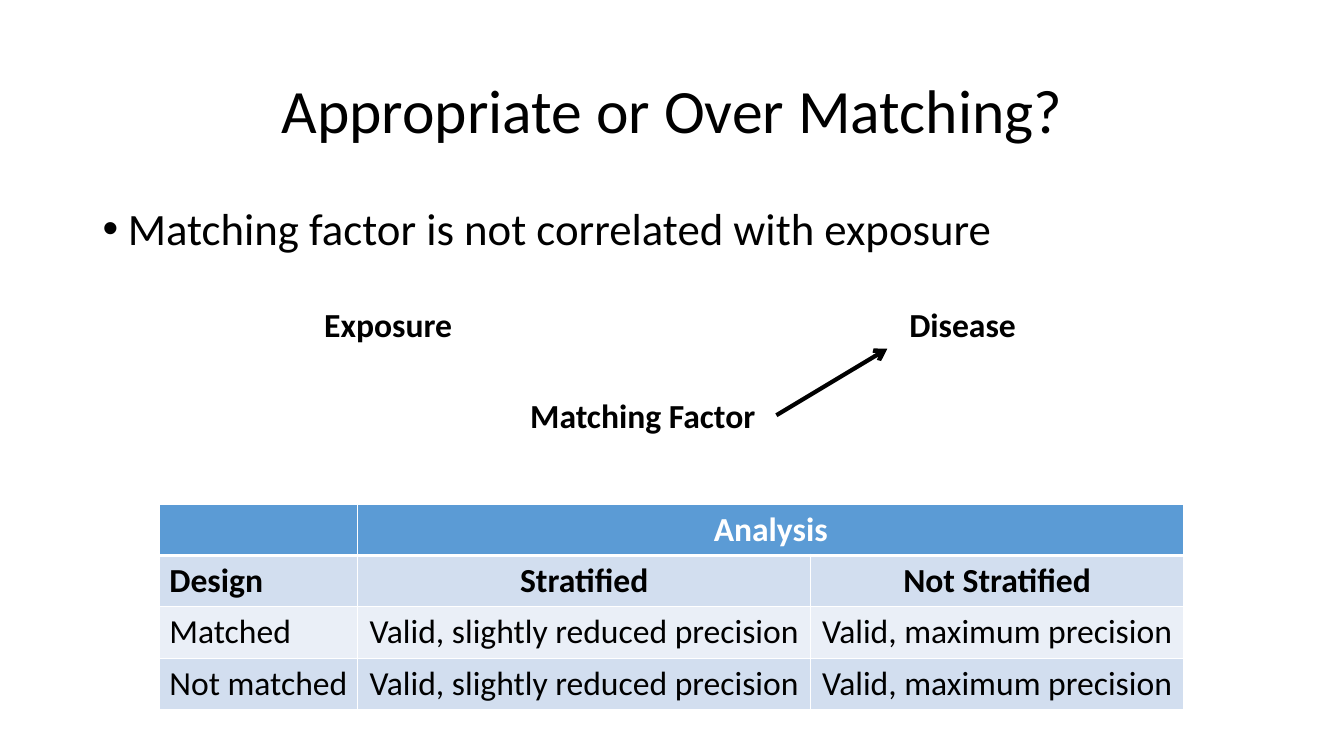
"""Build the slide on appropriate or over matching."""
from typing import NamedTuple

from lxml import etree
from pptx import Presentation
from pptx import util as u
from pptx.dml.color import RGBColor
from pptx.enum import shapes, text
from pptx.oxml import ns

PX = 9144
FONT = "Calibri"
BLACK, WHITE = "000000", "FFFFFF"
HEADER, BAND, LIGHT = "5B9BD5", "D2DEEF", "EAEFF7"
LEFT, CENTER = text.PP_ALIGN.LEFT, text.PP_ALIGN.CENTER
TOP, MIDDLE = text.MSO_ANCHOR.TOP, text.MSO_ANCHOR.MIDDLE


class Label(NamedTuple):
    words: str
    left: int
    top: int
    width: int
    height: int
    size: int = 24
    bold: bool = True
    align: text.PP_ALIGN = CENTER
    anchor: text.MSO_ANCHOR = TOP
    wrap: bool = False


class Row(NamedTuple):
    words: tuple[str, str, str]
    fill: str
    color: str = BLACK
    bold: bool = False


TITLE = Label("Appropriate or Over Matching?", 92, 40, 1150, 145, 44, False,
              anchor=MIDDLE, wrap=True)
STATEMENT = Label("Matching factor is not correlated with exposure",
                  92, 200, 1150, 476, 32, False, LEFT, wrap=True)
EXPOSURE = Label("Exposure", 293, 297, 184, 50)
DISEASE = Label("Disease", 892, 297, 127, 50, align=LEFT)
FACTOR = Label("Matching Factor", 505, 387, 265, 50)
ARROW_TIP = (880, 346)

TABLE_LEFT, TABLE_TOP, ROW_HEIGHT = 158, 500, 51
COLUMNS = (197, 449, 370)
VALID = ("Valid, slightly reduced precision", "Valid, maximum precision")
ROWS = (
    Row(("", "Analysis", ""), HEADER, WHITE, True),
    Row(("Design", "Stratified", "Not Stratified"), BAND, bold=True),
    Row(("Matched", *VALID), LIGHT),
    Row(("Not matched", *VALID), BAND),
)


def px(length: int) -> u.Emu:
    """Turn px into EMU."""
    return u.Emu(length * PX)


def rgb(color: str) -> RGBColor:
    """Turn a hex string into a colour."""
    return RGBColor.from_string(color)


def write(frame, words: str, size: int, color: str, bold: bool, align):
    """Fill a text frame with one formatted paragraph and return it."""
    frame.text = words
    line = frame.paragraphs[0]
    line.alignment = align
    for run in line.runs:
        run.font.name, run.font.size = FONT, u.Pt(size)
        run.font.bold, run.font.color.rgb = bold, rgb(color)
    return line


def add_label(slide, label: Label):
    """Draw a text box and return it."""
    box = slide.shapes.add_textbox(px(label.left), px(label.top),
                                   px(label.width), px(label.height))
    frame = box.text_frame
    frame.word_wrap, frame.vertical_anchor = label.wrap, label.anchor
    write(frame, label.words, label.size, BLACK, label.bold, label.align)
    return box


def add_bullet(line) -> None:
    """Give a paragraph a hanging bullet."""
    props = line._p.get_or_add_pPr()
    props.set("marL", str(px(25)))
    props.set("indent", str(px(-25)))
    etree.SubElement(props, ns.qn("a:buFont"), typeface="Arial")
    etree.SubElement(props, ns.qn("a:buChar"), char="•")


def add_arrow(slide, source, tip: tuple[int, int]) -> None:
    """Draw an arrow from the right side of a label to a point."""
    arrow = slide.shapes.add_connector(shapes.MSO_CONNECTOR.STRAIGHT,
                                       0, 0, px(tip[0]), px(tip[1]))
    arrow.begin_connect(source, 3)
    arrow.line.width, arrow.line.color.rgb = u.Pt(3), rgb(BLACK)
    etree.SubElement(arrow.line._get_or_add_ln(), ns.qn("a:tailEnd"), type="arrow")
    etree.SubElement(arrow._element.spPr, ns.qn("a:effectLst"))


def add_borders(cell, row: int) -> None:
    """Draw white cell borders, thicker below the header."""
    props = cell._tc.get_or_add_tcPr()
    widths = {"L": 1, "R": 1, "T": 3 if row == 1 else 1, "B": 3 if row == 0 else 1}
    for side, points in widths.items():
        edge = etree.SubElement(props, ns.qn(f"a:ln{side}"), w=str(u.Pt(points)))
        paint = etree.SubElement(edge, ns.qn("a:solidFill"))
        etree.SubElement(paint, ns.qn("a:srgbClr"), val=WHITE)


def add_analysis_table(slide) -> None:
    """Draw the table of designs and analyses."""
    table = slide.shapes.add_table(
        len(ROWS), len(COLUMNS), px(TABLE_LEFT), px(TABLE_TOP),
        px(sum(COLUMNS)), px(ROW_HEIGHT * len(ROWS))).table
    for column, width in zip(table.columns, COLUMNS):
        column.width = px(width)
    for r, row in enumerate(ROWS):
        table.rows[r].height = px(ROW_HEIGHT)
        for c, words in enumerate(row.words):
            cell = table.cell(r, c)
            add_borders(cell, r)
            cell.fill.solid()
            cell.fill.fore_color.rgb = rgb(row.fill)
            cell.vertical_anchor = TOP if r else MIDDLE
            write(cell.text_frame, words, 24, row.color, row.bold,
                  CENTER if c else LEFT)
    table.cell(0, 1).merge(table.cell(0, 2))


def main() -> None:
    """Build and save the slide."""
    deck = Presentation()
    deck.slide_width, deck.slide_height = px(1333), px(750)
    slide = deck.slides.add_slide(deck.slide_layouts[6])
    title = add_label(slide, TITLE).text_frame.paragraphs[0]
    title.line_spacing = 0.9
    statement = add_label(slide, STATEMENT).text_frame.paragraphs[0]
    statement.line_spacing, statement.space_before = 0.9, u.Pt(10)
    add_bullet(statement)
    add_analysis_table(slide)
    add_label(slide, EXPOSURE)
    add_label(slide, DISEASE)
    factor = add_label(slide, FACTOR)
    add_arrow(slide, factor, ARROW_TIP)
    deck.save("out.pptx")


if __name__ == "__main__":
    main()
